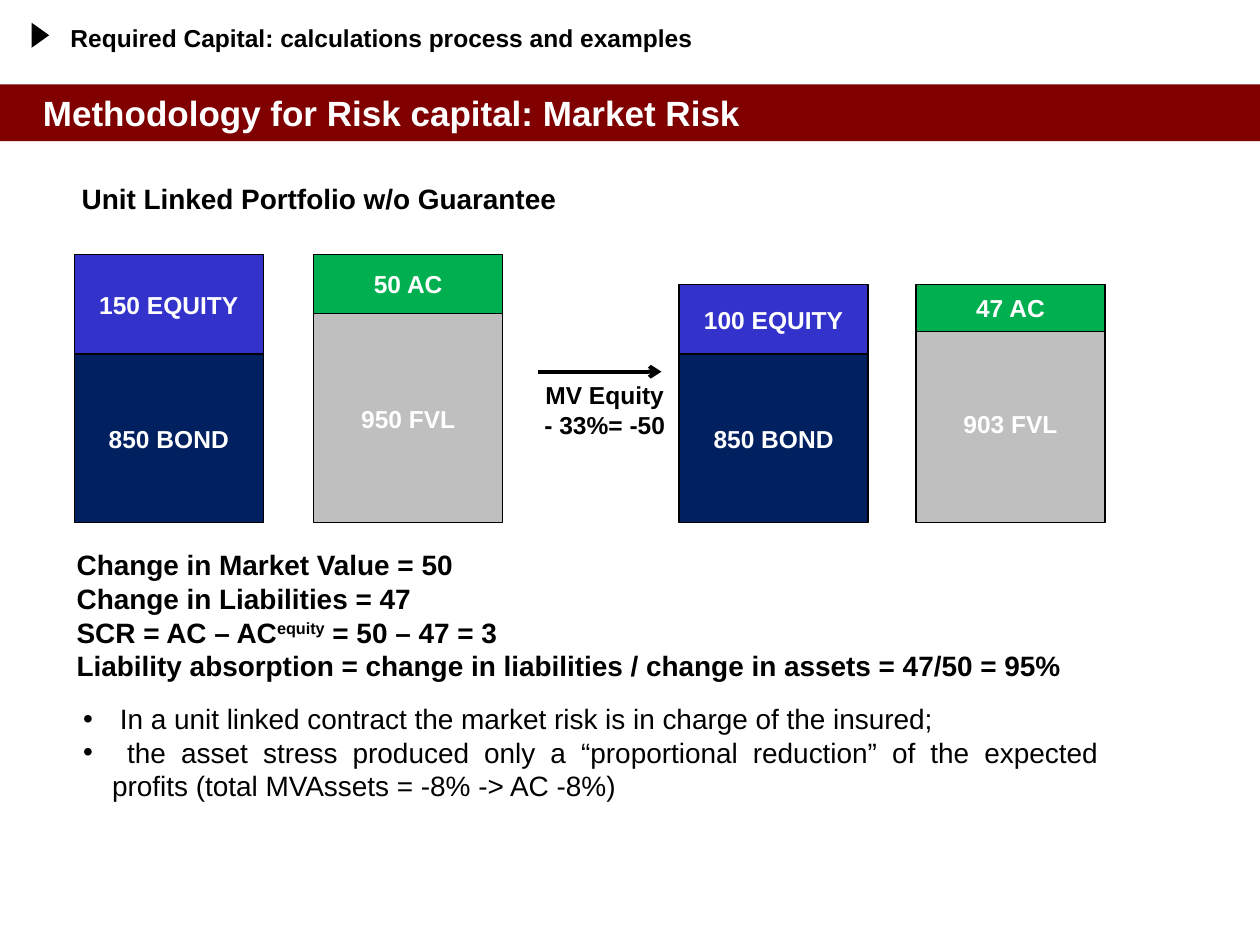
from lxml import etree
from pptx import Presentation
from pptx import util as u
from pptx.dml.color import RGBColor
from pptx.enum import shapes, text
from pptx.oxml import ns

COLORS = {
    "band": "800000", "bond": "002060", "equity": "3333CC",
    "fvl": "BFBFBF", "ac": "00B050", "black": "000000", "white": "FFFFFF",
}
LEFT, MID, JUST = text.PP_ALIGN.LEFT, text.PP_ALIGN.CENTER, text.PP_ALIGN.JUSTIFY
TOP, HALF = text.MSO_ANCHOR.TOP, text.MSO_ANCHOR.MIDDLE


def rgb(name):
    return RGBColor.from_string(COLORS[name])


def place(shape, box):
    shape.left, shape.top, shape.width, shape.height = map(u.Inches, box)


def style(para, size, color="black", bold=True, align=LEFT):
    para.alignment = align
    para.space_before = u.Pt(0)
    font = para.font
    font.name, font.size, font.bold = "Arial", u.Pt(size), bold
    font.color.rgb = rgb(color)


def write(shape, lines, size, color="black", bold=True, align=LEFT,
          anchor=TOP, wrap=True):
    frame = shape.text_frame
    frame.text = "\n".join(lines)
    frame.word_wrap = wrap
    frame.auto_size = text.MSO_AUTO_SIZE.NONE
    frame.vertical_anchor = anchor
    for para in frame.paragraphs:
        style(para, size, color, bold, align)
    return frame


def label(slide, box, lines, size, **look):
    shape = slide.shapes.add_textbox(*map(u.Inches, box))
    return write(shape, lines, size, **look)


def block(slide, kind, box, color, edge=False):
    shape = slide.shapes.add_shape(kind, *map(u.Inches, box))
    shape.shadow.inherit = False
    shape.fill.solid()
    shape.fill.fore_color.rgb = rgb(color)
    if edge:
        shape.line.color.rgb = rgb("black")
        shape.line.width = u.Pt(0.75)
    else:
        shape.line.fill.background()
    return shape


def header(slide, box):
    x, y, w, h = box
    mark = block(slide, shapes.MSO_SHAPE.ISOSCELES_TRIANGLE,
                 (x, y + 0.03, 0.2, 0.14), "black")
    mark.rotation = 90
    frame = label(slide, (x + 0.34, y, w - 0.34, h),
                  ["Required Capital: calculations process and examples"], 14)
    frame.margin_left = frame.margin_right = 0
    frame.margin_top = frame.margin_bottom = 0


def banner(slide, box):
    x, y, w, h = box
    band = block(slide, shapes.MSO_SHAPE.RECTANGLE, box, "band")
    title = slide.shapes.title
    title.element.addprevious(band.element)
    place(title, (x + 0.24, y, 9, h))
    write(title, ["Methodology for Risk capital: Market Risk"], 20,
          "white", anchor=HALF)


def stack(slide, box, upper, lower):
    x, y, w, h = box
    name, tall, color = lower
    parts = [(name, y + h - tall, tall, color), (upper[0], y, *upper[1:])]
    for name, top, tall, color in parts:
        bar = block(slide, shapes.MSO_SHAPE.RECTANGLE, (x, top, w, tall),
                    color, edge=True)
        write(bar, [name], 14, "white", align=MID, anchor=HALF, wrap=False)


def shock(slide, box):
    x, y, w, h = box
    ends = map(u.Inches, (x + 0.1, y, x + w - 0.18, y))
    arrow = slide.shapes.add_connector(shapes.MSO_CONNECTOR.STRAIGHT, *ends)
    arrow.line.color.rgb = rgb("black")
    arrow.line.width = u.Pt(2.25)
    tip = etree.SubElement(arrow.line._get_or_add_ln(), ns.qn("a:tailEnd"))
    tip.set("type", "arrow")
    etree.SubElement(arrow.element.spPr, ns.qn("a:effectLst"))
    label(slide, (x, y + 0.02, w, h), ["MV Equity", "- 33%= -50"], 14,
          align=MID, wrap=False)


def results(slide, box):
    frame = label(slide, box, [
        "Change in Market Value = 50",
        "Change in Liabilities = 47",
        "SCR = AC – AC",
        "Liability absorption = change in liabilities / change in assets"
        " = 47/50 = 95%",
    ], 16)
    scr = frame.paragraphs[2]
    power = scr.add_run()
    power.text = "equity"
    power.font._element.set("baseline", "30000")
    scr.add_run().text = " = 50 – 47 = 3"


def notes(slide, box):
    body = slide.placeholders[1]
    place(body, box)
    frame = write(body, [
        " In a unit linked contract the market risk is in charge of the insured;",
        " the asset stress produced only a “proportional reduction” of the"
        " expected profits (total MVAssets = -8% -> AC -8%)",
    ], 16, bold=False, align=JUST)
    for para in frame.paragraphs:
        props = para._p.get_or_add_pPr()
        props.set("marL", str(u.Inches(0.23)))
        props.set("indent", str(-u.Inches(0.23)))


def main():
    deck = Presentation()
    deck.slide_width, deck.slide_height = u.Inches(10), u.Inches(7.5)
    slide = deck.slides.add_slide(deck.slide_layouts[1])
    banner(slide, (0, 0.67, 10, 0.45))
    header(slide, (0.22, 0.18, 8.84, 0.39))
    label(slide, (0.55, 1.39, 6.26, 0.37),
          ["Unit Linked Portfolio w/o Guarantee"], 16, align=JUST)
    bond = ("850 BOND", 1.34, "bond")
    stack(slide, (0.59, 2.02, 1.5, 2.13), ("150 EQUITY", 0.79, "equity"), bond)
    stack(slide, (2.49, 2.02, 1.5, 2.13), ("50 AC", 0.47, "ac"),
          ("950 FVL", 1.66, "fvl"))
    shock(slide, (4.17, 2.95, 1.26, 0.57))
    stack(slide, (5.39, 2.26, 1.5, 1.89), ("100 EQUITY", 0.55, "equity"), bond)
    stack(slide, (7.27, 2.26, 1.5, 1.89), ("47 AC", 0.37, "ac"),
          ("903 FVL", 1.58, "fvl"))
    results(slide, (0.51, 4.3, 8.65, 1.18))
    notes(slide, (0.56, 5.52, 8.26, 0.91))
    deck.save("out.pptx")


if __name__ == "__main__":
    main()
